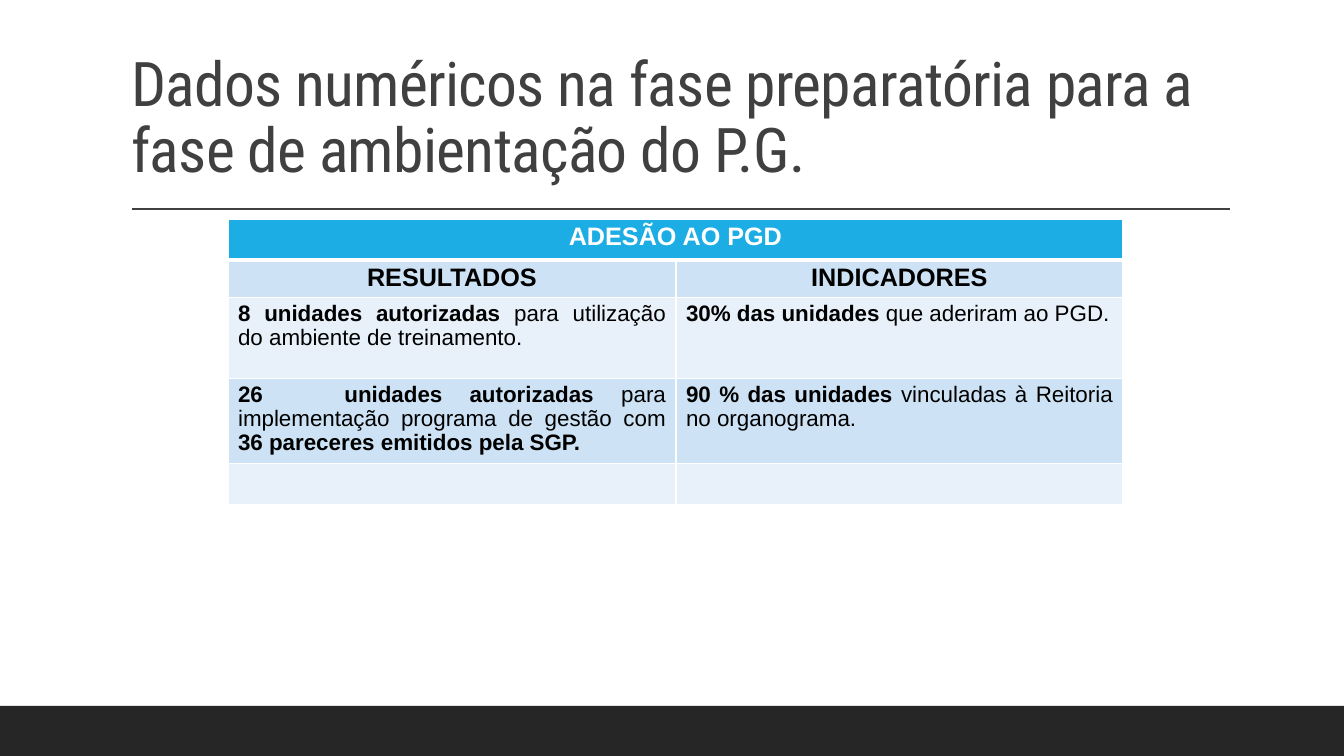
from dataclasses import dataclass

from lxml.etree import SubElement
from pptx import Presentation
from pptx.dml.color import RGBColor
from pptx.enum.shapes import MSO_CONNECTOR, MSO_SHAPE
from pptx.enum.text import MSO_ANCHOR, MSO_AUTO_SIZE, PP_ALIGN
from pptx.oxml import parse_xml
from pptx.oxml.ns import nsdecls, qn
from pptx.slide import Slide
from pptx.table import _Cell
from pptx.util import Emu, Pt

SLIDE_WIDTH, SLIDE_HEIGHT = 1344, 756
EMU_PER_PX = 12192000 / SLIDE_WIDTH


@dataclass(frozen=True)
class Theme:
    title_font: str = "Roboto Condensed"
    table_font: str = "Arial"
    title_size: int = 44
    heading_size: int = 18
    body_size: int = 16
    title_spacing: float = 0.9
    body_spacing: float = 0.96
    white: str = "FFFFFF"
    black: str = "000000"
    gray: str = "404040"
    footer: str = "262626"
    accent: str = "1CADE4"
    band_dark: str = "CDE3F5"
    band_light: str = "E8F1FA"


THEME = Theme()


@dataclass(frozen=True)
class Span:
    text: str
    bold: bool = False


@dataclass(frozen=True)
class Row:
    height: int
    fill: str
    cells: tuple[tuple[Span, ...], ...]
    align: PP_ALIGN = PP_ALIGN.JUSTIFY
    size: int = THEME.body_size
    color: str = THEME.black
    bottom_border: int = 1


ROWS = (
    Row(41, THEME.accent, ((Span("ADESÃO AO PGD", True),), ()),
        PP_ALIGN.CENTER, THEME.heading_size, THEME.white, 3),
    Row(37, THEME.band_dark, ((Span("RESULTADOS", True),), (Span("INDICADORES", True),)),
        PP_ALIGN.CENTER, THEME.heading_size),
    Row(81, THEME.band_light, (
        (Span("8 unidades autorizadas ", True),
         Span("para utilização do ambiente de treinamento.")),
        (Span("30% das unidades ", True), Span("que aderiram ao PGD.")))),
    Row(85, THEME.band_dark, (
        (Span("26   unidades autorizadas ", True),
         Span("para implementação programa de gestão com "),
         Span("36 pareceres emitidos pela SGP.", True)),
        (Span("90 % das unidades ", True),
         Span("vinculadas à Reitoria no organograma.")))),
    Row(41, THEME.band_light, ((), ())),
)
COLUMN_WIDTHS = (448, 447)


def px(length: int) -> Emu:
    return Emu(round(length * EMU_PER_PX))


def rgb(color: str) -> RGBColor:
    return RGBColor.from_string(color)


def add_footer_and_rule(slide: Slide) -> None:
    footer = slide.shapes.add_shape(
        MSO_SHAPE.RECTANGLE, px(0), px(706), px(SLIDE_WIDTH), px(50))
    footer.shadow.inherit = False
    footer.fill.solid()
    footer.fill.fore_color.rgb = rgb(THEME.footer)
    footer.line.fill.background()

    rule = slide.shapes.add_connector(
        MSO_CONNECTOR.STRAIGHT, px(132), px(209), px(1230), px(209))
    rule.line.color.rgb = rgb(THEME.gray)
    rule.line.width = Pt(1)
    SubElement(rule._element.spPr, qn("a:effectLst"))


def fill_title(slide: Slide, text: str) -> None:
    title = slide.shapes.title
    title.left, title.top, title.width, title.height = px(121), px(31), px(1109), px(160)
    frame = title.text_frame
    frame.text = text
    frame.word_wrap = True
    frame.auto_size = MSO_AUTO_SIZE.NONE
    frame.vertical_anchor = MSO_ANCHOR.BOTTOM
    paragraph = frame.paragraphs[0]
    paragraph.alignment = PP_ALIGN.LEFT
    paragraph.line_spacing = THEME.title_spacing
    run = paragraph.runs[0]
    run.font.name = THEME.title_font
    run.font.size = Pt(THEME.title_size)
    run.font.color.rgb = rgb(THEME.gray)
    run.font._element.set("spc", "-50")


def set_borders(cell: _Cell, top: int, bottom: int) -> None:
    widths = {"lnL": 1, "lnR": 1, "lnT": top, "lnB": bottom}
    properties = cell._tc.get_or_add_tcPr()
    for position, (side, width) in enumerate(widths.items()):
        properties.insert(position, parse_xml(
            f'<a:{side} {nsdecls("a")} w="{Pt(width)}"><a:solidFill>'
            f'<a:srgbClr val="{THEME.white}"/></a:solidFill></a:{side}>'))


def fill_cell(cell: _Cell, row: Row, spans: tuple[Span, ...], top_border: int) -> None:
    cell.fill.solid()
    cell.fill.fore_color.rgb = rgb(row.fill)
    set_borders(cell, top_border, row.bottom_border)
    paragraph = cell.text_frame.paragraphs[0]
    paragraph.alignment = row.align
    paragraph.line_spacing = THEME.body_spacing
    for span in spans:
        run = paragraph.add_run()
        run.text = span.text
        run.font.name = THEME.table_font
        run.font.size = Pt(row.size)
        run.font.bold = span.bold
        run.font.color.rgb = rgb(row.color)


def add_results_table(slide: Slide) -> None:
    table_height = sum(row.height for row in ROWS)
    results = slide.shapes.add_table(
        len(ROWS), len(COLUMN_WIDTHS), px(228), px(219),
        px(sum(COLUMN_WIDTHS)), px(table_height)).table
    results.first_row = False
    results.horz_banding = False
    for column, width in zip(results.columns, COLUMN_WIDTHS):
        column.width = px(width)
    top_border = 1
    for index, row in enumerate(ROWS):
        results.rows[index].height = px(row.height)
        for column, spans in enumerate(row.cells):
            fill_cell(results.cell(index, column), row, spans, top_border)
        top_border = row.bottom_border
    results.cell(0, 0).merge(results.cell(0, 1))


def main() -> None:
    deck = Presentation()
    deck.slide_width, deck.slide_height = px(SLIDE_WIDTH), px(SLIDE_HEIGHT)
    slide = deck.slides.add_slide(deck.slide_layouts.get_by_name("Title Only"))
    slide.background.fill.solid()
    slide.background.fill.fore_color.rgb = rgb(THEME.white)
    add_footer_and_rule(slide)
    fill_title(
        slide, "Dados numéricos na fase preparatória para a fase de ambientação do P.G.")
    add_results_table(slide)
    deck.save("out.pptx")


if __name__ == "__main__":
    main()
